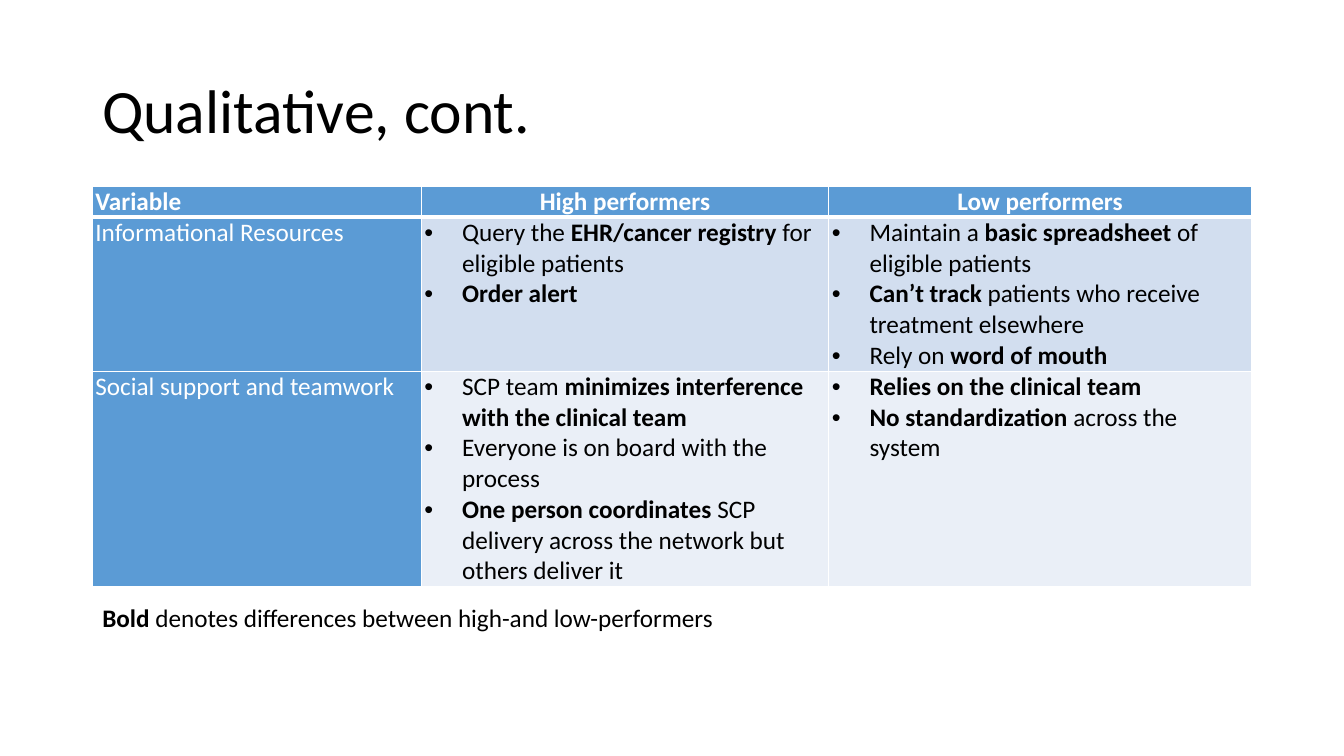
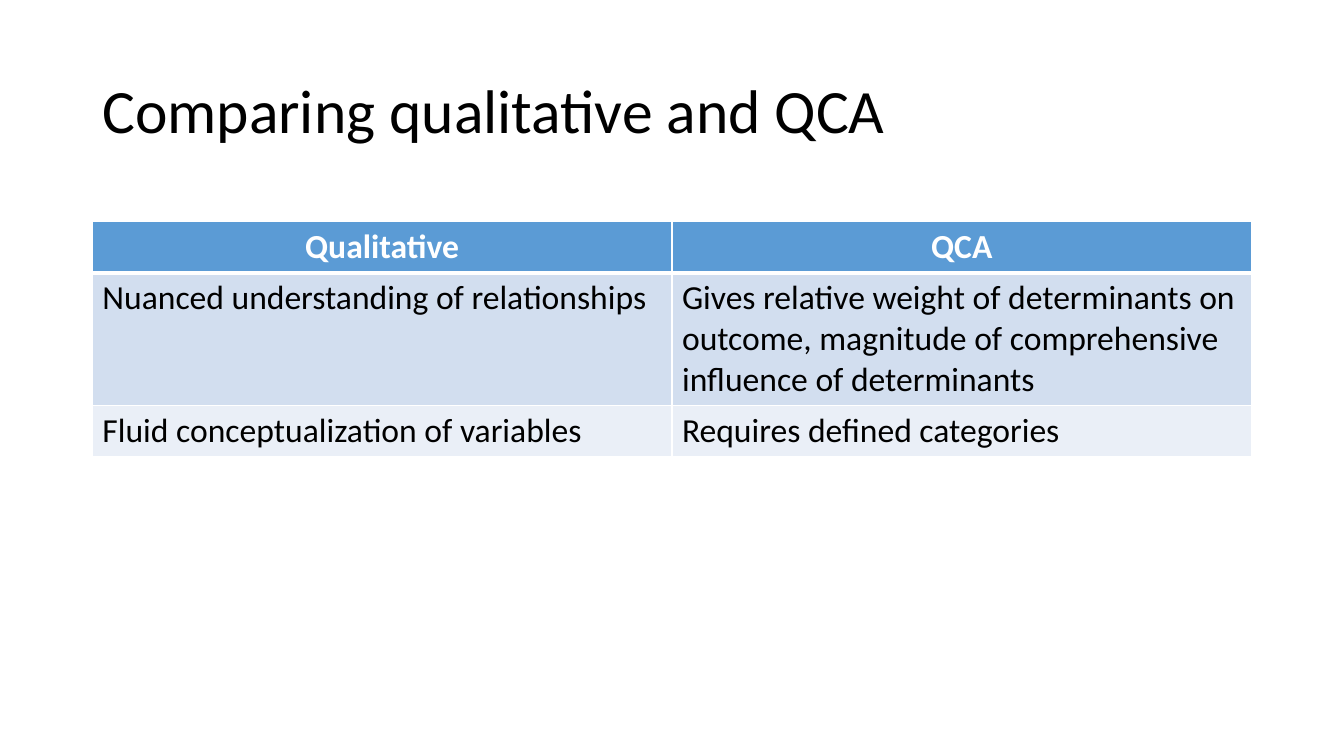
"""Build two slides comparing qualitative findings and QCA."""
from lxml.etree import SubElement
from pptx import Presentation
from pptx.dml.color import RGBColor
from pptx.enum.text import MSO_ANCHOR, PP_ALIGN
from pptx.oxml import parse_xml
from pptx.oxml.ns import nsdecls, qn
from pptx.util import Pt

COLORS = {"text": "000000", "white": "FFFFFF", "header": "5B9BD5",
          "band_dark": "D2DEEF", "band_light": "EAEFF7"}
FONT = "Calibri"
LEFT, WIDTH = 66, 828
BULLET_INDENT = 27


def add_runs(para, text, size, color, bold=False):
    for index, part in enumerate(text.split("*")):
        if part:
            span = para.add_run()
            span.text = part
            span.font.name = FONT
            span.font.size = Pt(size)
            span.font.bold = bold or index % 2 == 1
            span.font.color.rgb = RGBColor.from_string(COLORS[color])


def style_cell(cell, fill, top, bottom):
    cell.fill.solid()
    cell.fill.fore_color.rgb = RGBColor.from_string(COLORS[fill])
    properties = cell._tc.get_or_add_tcPr()
    edges = [("lnL", 1), ("lnR", 1), ("lnT", top), ("lnB", bottom)]
    for index, (edge, weight) in enumerate(edges):
        properties.insert(index, parse_xml(
            f'<a:{edge} {nsdecls("a")} w="{Pt(weight)}"><a:solidFill>'
            f'<a:srgbClr val="{COLORS["white"]}"/></a:solidFill></a:{edge}>'))


SLIDES = [
    {
        "title": "Qualitative, cont.",
        "top": 133.2, "size": 18, "margins": (2.16, 0),
        "columns": [235, 291, 302], "heights": [22, 110, 154],
        "label_column": True,
        "rows": [
            ["Variable", "High performers", "Low performers"],
            ["Informational Resources",
             ["Query the *EHR/cancer registry *for eligible patients", "*Order alert*"],
             ["Maintain a *basic spreadsheet *of eligible patients",
              "*Can’t track *patients who receive treatment elsewhere",
              "Rely on *word of mouth*"]],
            ["Social support and teamwork",
             ["SCP team *minimizes interference with the clinical team*",
              "Everyone is on board with the process",
              "*One person coordinates* SCP delivery across the network but others deliver it"],
             ["*Relies on the clinical team*", "*No standardization* across the system"]],
        ],
        "note": "*Bold *denotes differences between high-and low-performers",
    },
    {
        "title": "Comparing qualitative and QCA",
        "top": 158.4, "size": 24, "margins": (7.2, 3.6),
        "columns": [414, 414], "heights": [36.5, 95, 36.5],
        "label_column": False,
        "rows": [
            ["Qualitative", "QCA"],
            ["Nuanced understanding of relationships",
             "Gives relative weight of determinants on outcome, magnitude of "
             "comprehensive influence of determinants"],
            ["Fluid conceptualization of variables", "Requires defined categories"],
        ],
        "note": None,
    },
]

deck = Presentation()
deck.slide_width, deck.slide_height = Pt(960), Pt(540)

for content in SLIDES:
    page = deck.slides.add_slide(deck.slide_layouts[6])
    title = page.shapes.add_textbox(Pt(LEFT), Pt(28.8), Pt(WIDTH), Pt(104.4)).text_frame
    title.word_wrap = True
    title.vertical_anchor = MSO_ANCHOR.MIDDLE
    title.paragraphs[0].line_spacing = 0.9
    add_runs(title.paragraphs[0], content["title"], 44, "text")

    rows, columns, heights = content["rows"], content["columns"], content["heights"]
    table = page.shapes.add_table(len(rows), len(columns), Pt(LEFT), Pt(content["top"]),
                                  Pt(WIDTH), Pt(sum(heights))).table
    for column, width in zip(table.columns, columns):
        column.width = Pt(width)
    for row, height in zip(table.rows, heights):
        row.height = Pt(height)

    side, edge = content["margins"]
    for row_index, row in enumerate(rows):
        is_header = row_index == 0
        band = "band_dark" if row_index % 2 else "band_light"
        for column_index, entry in enumerate(row):
            cell = table.cell(row_index, column_index)
            is_label = content["label_column"] and column_index == 0
            on_blue = is_header or is_label
            style_cell(cell, "header" if on_blue else band,
                       3 if row_index == 1 else 1, 3 if is_header else 1)
            cell.margin_left = cell.margin_right = Pt(side)
            cell.margin_top = cell.margin_bottom = Pt(edge)
            bulleted = isinstance(entry, list)
            frame = cell.text_frame
            for line_index, line in enumerate(entry if bulleted else [entry]):
                para = frame.add_paragraph() if line_index else frame.paragraphs[0]
                centered = is_header and not is_label
                para.alignment = PP_ALIGN.CENTER if centered else PP_ALIGN.LEFT
                add_runs(para, line, content["size"], "white" if on_blue else "text", is_header)
                if bulleted:
                    properties = para._p.get_or_add_pPr()
                    properties.set("marL", str(Pt(BULLET_INDENT)))
                    properties.set("indent", str(-Pt(BULLET_INDENT)))
                    SubElement(properties, qn("a:buFont"), typeface="Arial")
                    SubElement(properties, qn("a:buChar"), char="•")

    if content["note"]:
        note = page.shapes.add_textbox(Pt(LEFT), Pt(427), Pt(457), Pt(29)).text_frame
        note.word_wrap = False
        add_runs(note.paragraphs[0], content["note"], 18, "text")

deck.save("out.pptx")
